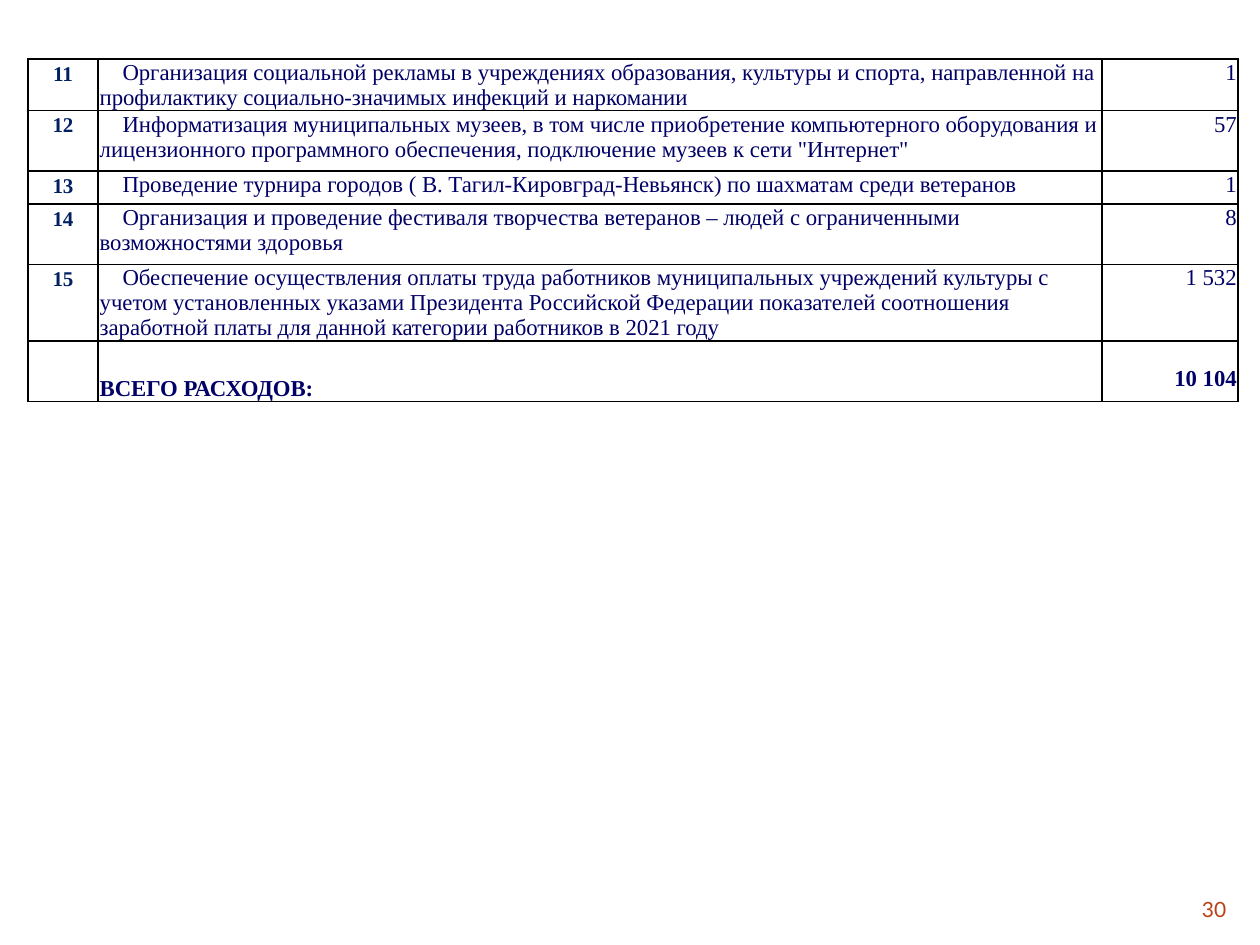
from lxml.etree import SubElement
from pptx import Presentation
from pptx.dml.color import RGBColor
from pptx.enum.text import MSO_ANCHOR, PP_ALIGN
from pptx.oxml.ns import qn
from pptx.util import Cm, Pt

NAVY = RGBColor(0x00, 0x00, 0x66)
NUMBER_BLUE = RGBColor(0x00, 0x20, 0x60)
RUST = RGBColor(0xBA, 0x40, 0x14)
BORDER = RGBColor(0x00, 0x00, 0x00)
SERIF = "Times New Roman"

# Content: number, expense item, amount, row height in cm
EXPENSES = [
    ("11", "Организация социальной рекламы в учреждениях образования, культуры и спорта, "
           "направленной на профилактику социально-значимых инфекций и наркомании", "1", 1.03),
    ("12", "Информатизация муниципальных музеев, в том числе приобретение компьютерного "
           "оборудования и лицензионного программного обеспечения, подключение музеев "
           "к сети \"Интернет\"", "57", 1.22),
    ("13", "Проведение турнира городов ( В. Тагил-Кировград-Невьянск) по шахматам "
           "среди ветеранов", "1", 0.66),
    ("14", "Организация и проведение фестиваля творчества ветеранов – людей "
           "с ограниченными возможностями здоровья", "8", 1.22),
    ("15", "Обеспечение осуществления оплаты труда работников муниципальных учреждений "
           "культуры с учетом установленных указами Президента Российской Федерации "
           "показателей соотношения заработной платы для данной категории работников "
           "в 2021 году", "1 532", 1.53),
]
TOTAL = ("ВСЕГО РАСХОДОВ:", "10 104", 1.22)
COLUMN_WIDTHS = [1.42, 20.24, 2.74]
PAGE_NUMBER = "30"


def write(holder, text, size=13, color=NAVY, bold=False, align=PP_ALIGN.LEFT, font=SERIF,
          spacing=None, indent=0, margins=(0.03, 0.03, 0.03, 0), anchor=MSO_ANCHOR.TOP):
    """Write one paragraph in a cell or text frame; margins are left, top, right, bottom."""
    (holder.margin_left, holder.margin_top,
     holder.margin_right, holder.margin_bottom) = map(Cm, margins)
    holder.vertical_anchor = anchor
    frame = getattr(holder, "text_frame", holder)
    frame.word_wrap = True
    para = frame.paragraphs[0]
    para.alignment = align
    if spacing:
        para.line_spacing = spacing
    if indent:
        para._p.get_or_add_pPr().set("indent", str(Cm(indent)))
    span = para.add_run()
    span.text = text
    span.font.name = font
    span.font.size = Pt(size)
    span.font.bold = bold
    span.font.color.rgb = color


def outline(cell):
    """Clear the cell fill and draw all four borders."""
    properties = cell._tc.get_or_add_tcPr()
    for side in ("a:lnL", "a:lnR", "a:lnT", "a:lnB"):
        line = SubElement(properties, qn(side), w=str(Pt(1)))
        fill = SubElement(line, qn("a:solidFill"))
        SubElement(fill, qn("a:srgbClr"), val=str(BORDER))
    cell.fill.background()


deck = Presentation()
deck.slide_width, deck.slide_height = Cm(25.4), Cm(19.05)
page = deck.slides.add_slide(deck.slide_layouts[6])

# Expense table
heights = [row[-1] for row in EXPENSES] + [TOTAL[-1]]
table = page.shapes.add_table(len(heights), len(COLUMN_WIDTHS), Cm(0.56), Cm(1.19),
                              Cm(sum(COLUMN_WIDTHS)), Cm(sum(heights))).table
table.first_row = table.horz_banding = False
for column, width in zip(table.columns, COLUMN_WIDTHS):
    column.width = Cm(width)
for row, height in zip(table.rows, heights):
    row.height = Cm(height)
for cell in table.iter_cells():
    outline(cell)

for index, (number, item, amount, _) in enumerate(EXPENSES):
    write(table.cell(index, 0), number, size=12, color=NUMBER_BLUE, bold=True,
          align=PP_ALIGN.CENTER, spacing=1.15, margins=(0.13, 0, 0.13, 0))
    write(table.cell(index, 1), item, indent=0.46)
    write(table.cell(index, 2), amount, align=PP_ALIGN.RIGHT)

# Total row
last = len(EXPENSES)
write(table.cell(last, 1), TOTAL[0], bold=True, anchor=MSO_ANCHOR.BOTTOM)
write(table.cell(last, 2), TOTAL[1], bold=True, align=PP_ALIGN.RIGHT,
      margins=(0.03, 0.52, 0.03, 0))

# Page number
box = page.shapes.add_textbox(Cm(22.86), Cm(17.98), Cm(2.11), Cm(0.69))
write(box.text_frame, PAGE_NUMBER, size=12, color=RUST, font="Lato", align=PP_ALIGN.RIGHT,
      margins=(0.25, 0.13, 0.25, 0.13), anchor=MSO_ANCHOR.MIDDLE)

deck.save("out.pptx")
